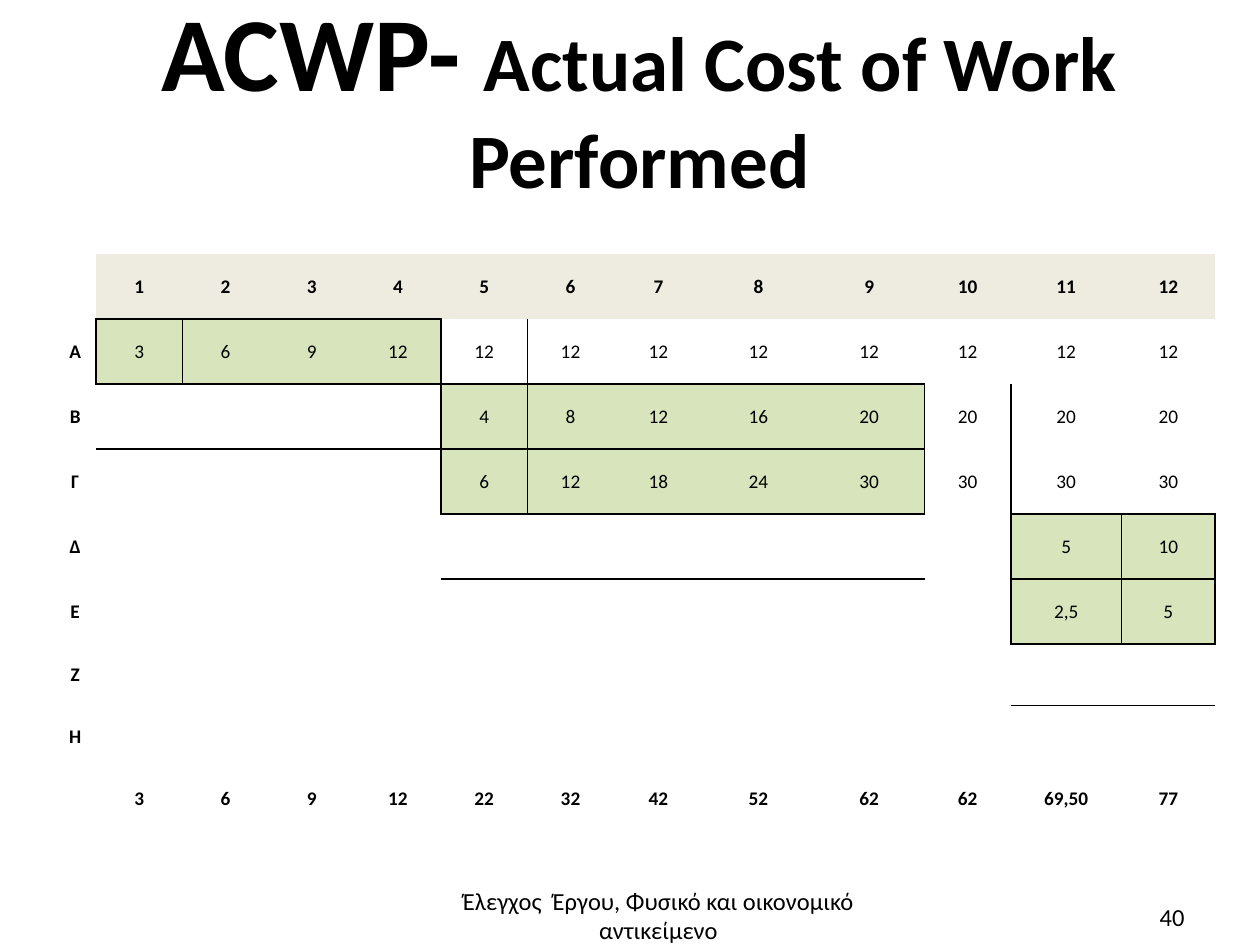
from collections import defaultdict
from lxml import etree
from pptx import Presentation
from pptx.dml.color import RGBColor
from pptx.enum.text import MSO_ANCHOR, PP_ALIGN
from pptx.oxml.ns import qn
from pptx.util import Pt

CENTER, RIGHT = PP_ALIGN.CENTER, PP_ALIGN.RIGHT
TOP, MIDDLE = MSO_ANCHOR.TOP, MSO_ANCHOR.MIDDLE
PLAIN = "{2D5ABB26-0587-4C30-8999-92F81FD0307C}"
COLORS = {"ink": "000000", "head": "EEECE1", "bar": "D8E4BC"}

WIDTHS = [23.9] + [49.3] * 6 + [51.1, 63.3, 63.3, 49.3, 63.3, 53.3]
HEIGHTS = [37.15] * 6 + [35.2] * 3
ROWS = [
    ("", 1, "1 2 3 4 5 6 7 8 9 10 11 12"),
    ("Α", 1, "3 6 9 12 12 12 12 12 12 12 12 12"),
    ("Β", 5, "4 8 12 16 20 20 20 20"),
    ("Γ", 5, "6 12 18 24 30 30 30 30"),
    ("Δ", 11, "5 10"),
    ("Ε", 11, "2,5 5"),
    ("Ζ", 1, ""),
    ("Η", 1, ""),
    ("", 1, "3 6 9 12 22 32 42 52 62 62 69,50 77"),
]
BARS = {1: (1, 4), 2: (5, 9), 3: (5, 9), 4: (11, 12), 5: (11, 12)}
TOTAL = len(ROWS) - 1


def write(par, text, size=11, bold=False, color="ink", font="Calibri", align=CENTER):
    par.alignment = align
    run = par.add_run()
    run.text = text
    run.font.name = font
    run.font.size = Pt(size)
    run.font.bold = bold
    run.font.color.rgb = RGBColor.from_string(COLORS[color])


def find_edges(bars):
    edges = defaultdict(set)
    for row, (first, last) in bars.items():
        for col in range(first, last + 1):
            edges[row, col] |= {"T", "B"}
            edges[row - 1, col].add("B")
            edges[row + 1, col].add("T")
        edges[row, first].add("L")
        edges[row, first - 1].add("R")
        edges[row, last].add("R")
        edges[row, last + 1].add("L")
    return edges


class Deck:
    def __init__(self, width, height):
        self.file = Presentation()
        self.file.slide_width, self.file.slide_height = Pt(width), Pt(height)
        self.slide = self.file.slides.add_slide(self.file.slide_layouts[6])

    def text(self, box, parts, align=CENTER, anchor=TOP, insets=(7.2, 3.6, 7.2, 3.6), lines=None):
        frame = self.slide.shapes.add_textbox(*map(Pt, box)).text_frame
        frame.word_wrap = True
        frame.vertical_anchor = anchor
        (frame.margin_left, frame.margin_top,
         frame.margin_right, frame.margin_bottom) = map(Pt, insets)
        par = frame.paragraphs[0]
        if lines:
            par.line_spacing = lines
        for text, size, bold in parts:
            write(par, text, size=size, bold=bold, align=align)

    def table(self, left, top, widths, heights):
        frame = self.slide.shapes.add_table(
            len(heights), len(widths), Pt(left), Pt(top), Pt(sum(widths)), Pt(sum(heights)))
        grid = frame.table
        grid.first_row = grid.horz_banding = False
        grid._tbl.tblPr.find(qn("a:tableStyleId")).text = PLAIN
        for col, width in zip(grid.columns, widths):
            col.width = Pt(width)
        for row, height in zip(grid.rows, heights):
            row.height = Pt(height)
        return grid

    def cell(self, cell, text, fill=None, bold=False, edges=()):
        cell.vertical_anchor = MIDDLE
        cell.margin_left = cell.margin_top = cell.margin_right = Pt(0.7)
        cell.margin_bottom = 0
        if fill:
            cell.fill.solid()
            cell.fill.fore_color.rgb = RGBColor.from_string(COLORS[fill])
        else:
            cell.fill.background()
        if text:
            write(cell.text_frame.paragraphs[0], text, bold=bold)
        props = cell._tc.get_or_add_tcPr()
        for place, side in enumerate(sorted(edges, key="LRTB".index)):
            line = etree.Element(qn("a:ln" + side), w=str(Pt(1)))
            paint = etree.SubElement(line, qn("a:solidFill"))
            etree.SubElement(paint, qn("a:srgbClr"), val=COLORS["ink"])
            props.insert(place, line)


def main():
    deck = Deck(720, 540)
    deck.text((36.7, 6.5, 657.4, 99.4),
              [("ACWP- ", 60, True), ("Actual Cost of Work Performed", 44, True)],
              anchor=MIDDLE, insets=(0, 1.4, 0, 0), lines=0.98)

    grid = deck.table(31, 145.2, WIDTHS, HEIGHTS)
    edges = find_edges(BARS)
    for row, (label, start, values) in enumerate(ROWS):
        texts = [label] + [""] * (start - 1) + values.split()
        texts += [""] * (len(WIDTHS) - len(texts))
        first, last = BARS.get(row, (1, 0))
        for col, text in enumerate(texts):
            fill = "bar" if first <= col <= last else None
            if row == 0 and col > 0:
                fill = "head"
            deck.cell(grid.cell(row, col), text, fill=fill,
                      bold=col == 0 or row in (0, TOTAL), edges=edges[row, col])

    deck.text((250.6, 502.6, 251.3, 39.6),
              [("Έλεγχος  Έργου, Φυσικό και οικονομικό αντικείμενο", 14, False)])
    deck.text((516.2, 511.9, 167.8, 28.8), [("40", 14, False)], align=RIGHT)
    deck.file.save("out.pptx")


if __name__ == "__main__":
    main()
